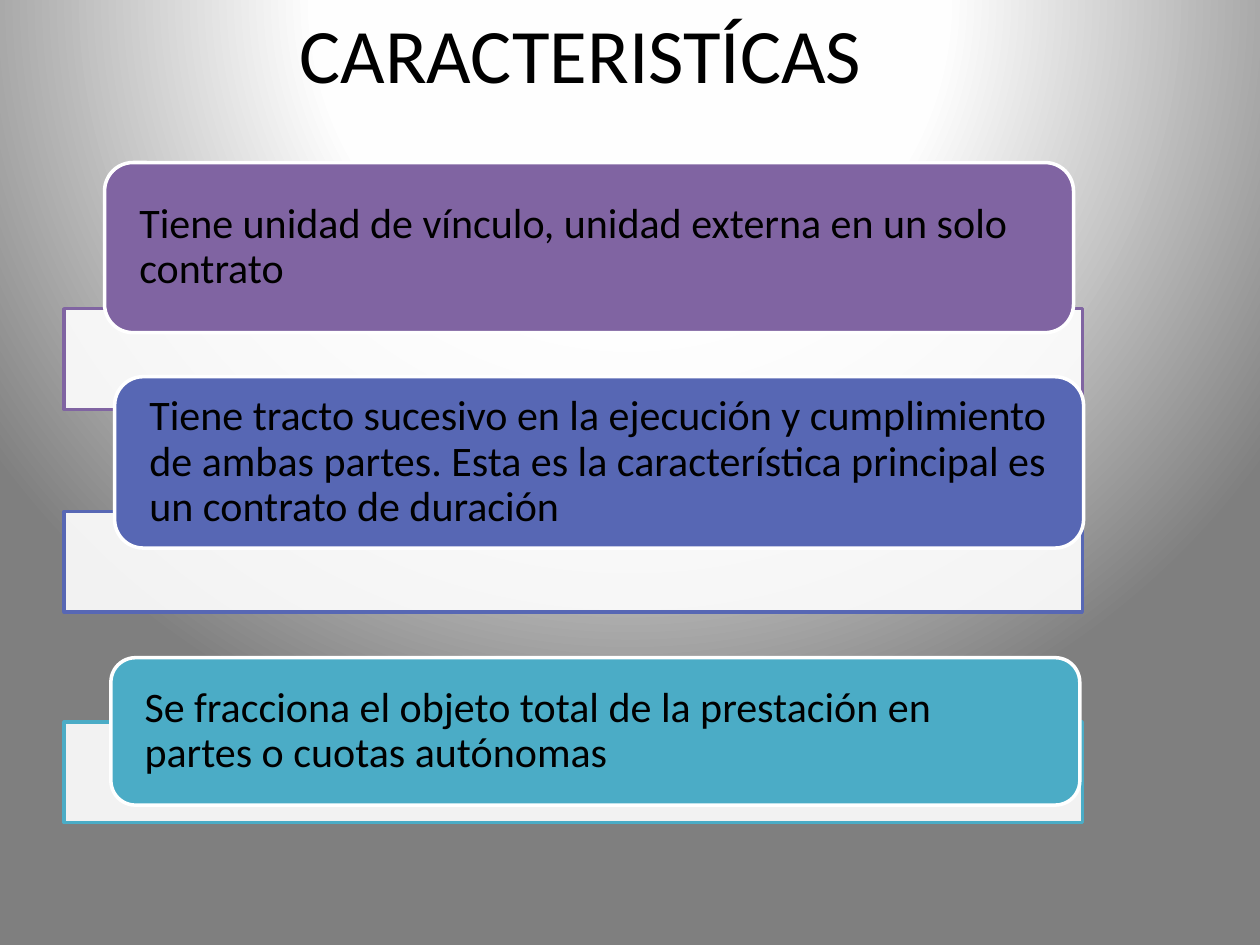
from lxml import etree
from pptx import Presentation
from pptx.dml.color import RGBColor
from pptx.enum.shapes import MSO_SHAPE
from pptx.enum.text import MSO_ANCHOR, PP_ALIGN
from pptx.oxml import parse_xml
from pptx.oxml.ns import nsdecls, qn
from pptx.util import Inches, Pt

BLACK = RGBColor(0x00, 0x00, 0x00)
WHITE = RGBColor(0xFF, 0xFF, 0xFF)
PURPLE = RGBColor(0x80, 0x64, 0xA2)
BLUE = RGBColor(0x57, 0x67, 0xB4)
TEAL = RGBColor(0x4B, 0xAC, 0xC6)
NEAR_WHITE = RGBColor(0xFE, 0xFE, 0xFE)
GRAY = RGBColor(0x7F, 0x7F, 0x7F)

BAR_LEFT, BAR_WIDTH, BAR_HEIGHT = 0.51, 8.08, 0.8
CARD_WIDTH = 7.69

ITEMS = [
    (PURPLE, 2.45, (0.32, -1.16, 1.35),
     "Tiene unidad de vínculo, unidad externa en un solo contrato"),
    (BLUE, 4.06, (0.4, -1.07, 1.36),
     "Tiene tracto sucesivo en la ejecución y cumplimiento de ambas partes. "
     "Esta es la característica principal es un contrato de duración"),
    (TEAL, 5.73, (0.37, -0.51, 1.17),
     "Se fracciona el objeto total de la prestación en partes o cuotas autónomas"),
]


def set_background(s):
    stops = "".join(
        f'<a:gs pos="{pos * 1000}"><a:srgbClr val="{color}"/></a:gs>'
        for pos, color in [(0, WHITE), (40, NEAR_WHITE), (100, GRAY)])
    bg = parse_xml(
        f'<p:bg {nsdecls("p", "a")}><p:bgPr><a:gradFill rotWithShape="1">'
        f'<a:gsLst>{stops}</a:gsLst><a:path path="circle">'
        '<a:fillToRect l="50000" t="-80000" r="50000" b="180000"/></a:path>'
        '</a:gradFill><a:effectLst/></p:bgPr></p:bg>')
    s._element.cSld.insert(0, bg)


def write_text(tf, text, size, align=PP_ALIGN.LEFT, anchor=MSO_ANCHOR.TOP,
               line_spacing=None):
    tf.word_wrap = True
    tf.vertical_anchor = anchor
    p = tf.paragraphs[0]
    p.alignment = align
    p.line_spacing = line_spacing
    r = p.add_run()
    r.text = text
    r.font.name = "Calibri"
    r.font.size = Pt(size)
    r.font.color.rgb = BLACK


def add_box(s, kind, left, top, width, height, fill, line, opacity=100):
    sp = s.shapes.add_shape(kind, Inches(left), Inches(top),
                            Inches(width), Inches(height))
    sp.shadow.inherit = False
    sp.fill.solid()
    sp.fill.fore_color.rgb = fill
    if opacity < 100:
        color = sp._element.spPr.find(qn("a:solidFill"))[0]
        etree.SubElement(color, qn("a:alpha"), val=str(opacity * 1000))
    sp.line.color.rgb = line
    sp.line.width = Pt(2)
    return sp


def add_title(s, left, top, width, height):
    sp = s.shapes.add_textbox(Inches(left), Inches(top),
                              Inches(width), Inches(height))
    write_text(sp.text_frame, "CARACTERISTÍCAS", 44, align=PP_ALIGN.CENTER)


def add_item(s, left, top, color, card, text):
    dx, dy, height = card
    add_box(s, MSO_SHAPE.RECTANGLE, left, top, BAR_WIDTH, BAR_HEIGHT,
            WHITE, color, opacity=90)
    sp = add_box(s, MSO_SHAPE.ROUNDED_RECTANGLE, left + dx, top + dy,
                 CARD_WIDTH, height, color, WHITE)
    tf = sp.text_frame
    tf.margin_left = tf.margin_right = Inches(0.21)
    tf.margin_top = tf.margin_bottom = 0
    write_text(tf, text, 24, anchor=MSO_ANCHOR.MIDDLE, line_spacing=0.9)


def main():
    prs = Presentation()
    prs.slide_width, prs.slide_height = Inches(10), Inches(7.5)
    s = prs.slides.add_slide(prs.slide_layouts[6])
    set_background(s)
    add_title(s, -1.14, 0, 11.5, 1.45)
    for color, top, card, text in ITEMS:
        add_item(s, BAR_LEFT, top, color, card, text)
    prs.save("out.pptx")


if __name__ == "__main__":
    main()
